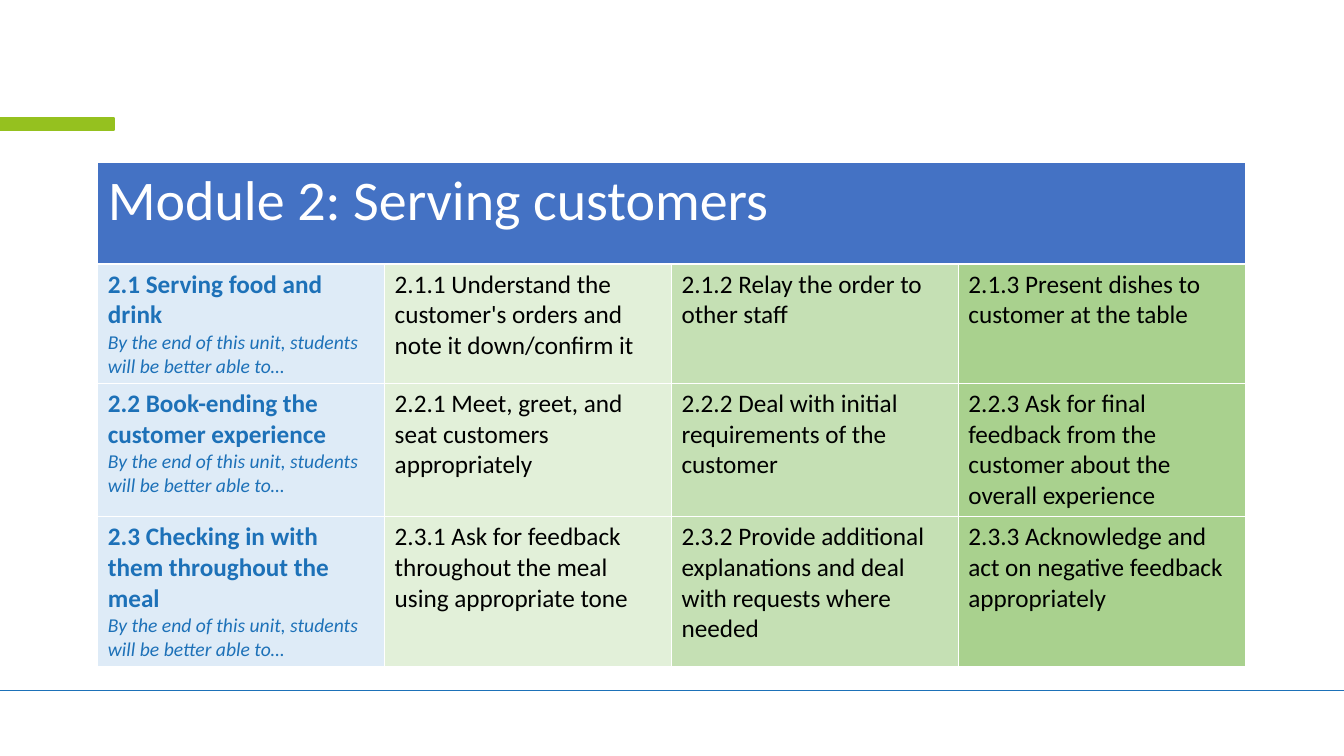
from lxml import etree
from pptx import Presentation
from pptx.dml.color import RGBColor
from pptx.enum import shapes
from pptx.oxml import ns
from pptx.util import Inches, Pt

WHITE = RGBColor(0xFF, 0xFF, 0xFF)
BLACK = RGBColor(0, 0, 0)
BLUE = RGBColor(0x1D, 0x71, 0xB8)
LIME = RGBColor(0x95, 0xC1, 0x1F)
HEADER_BLUE = RGBColor(0x44, 0x72, 0xC4)
COLUMN_FILLS = [
    RGBColor(0xDE, 0xEB, 0xF7),
    RGBColor(0xE2, 0xF0, 0xD9),
    RGBColor(0xC5, 0xE0, 0xB4),
    RGBColor(0xA9, 0xD1, 0x8E),
]

MODULE = "Module 2: Serving customers"
UNIT_LEAD = "By the end of this unit, students will be better able to…"
UNITS = [
    ("2.1 Serving food and drink",
     "2.1.1 Understand the customer's orders and note it down/confirm it",
     "2.1.2 Relay the order to other staff",
     "2.1.3 Present dishes to customer at the table"),
    ("2.2 Book-ending the customer experience",
     "2.2.1 Meet, greet, and seat customers appropriately",
     "2.2.2 Deal with initial requirements of the customer",
     "2.2.3 Ask for final feedback from the customer about the overall experience"),
    ("2.3 Checking in with them throughout the meal",
     "2.3.1 Ask for feedback throughout the meal using appropriate tone",
     "2.3.2 Provide additional explanations and deal with requests where needed",
     "2.3.3 Acknowledge and act on negative feedback appropriately"),
]


class ModuleSlide:
    """Draws the elements of a module overview in one shared style."""

    font = "Calibri"

    def __init__(self, slide):
        self.slide = slide

    def rule(self, y, width, color):
        rule = self.slide.shapes.add_connector(
            shapes.MSO_CONNECTOR.STRAIGHT, 0, Inches(y), Inches(width), Inches(y))
        rule.line.color.rgb = color
        rule.line.width = Pt(1)
        etree.SubElement(rule._element.spPr, ns.qn("a:effectLst"))

    def bar(self, left, top, width, height, color):
        bar = self.slide.shapes.add_shape(
            shapes.MSO_SHAPE.RECTANGLE,
            Inches(left), Inches(top), Inches(width), Inches(height))
        bar.shadow.inherit = False
        bar.fill.solid()
        bar.fill.fore_color.rgb = color
        bar.line.color.rgb = color
        bar.line.width = Pt(1)

    def add_words(self, paragraph, words, size, color, bold=False, italic=False):
        run = paragraph.add_run()
        run.text = words
        run.font.name = self.font
        run.font.size = Pt(size)
        run.font.color.rgb = color
        run.font.bold = bold
        run.font.italic = italic

    def cell(self, cell, fill, words, size, color, bold=False):
        cell.fill.solid()
        cell.fill.fore_color.rgb = fill
        self.add_words(cell.text_frame.paragraphs[0], words, size, color, bold)

    def overview(self, left, top, width, height, header_height, unit_height):
        frame = self.slide.shapes.add_table(
            len(UNITS) + 1, len(COLUMN_FILLS),
            Inches(left), Inches(top), Inches(width), Inches(height))
        grid = frame.table
        for row in grid.rows:
            row.height = Inches(unit_height)
        grid.rows[0].height = Inches(header_height)
        frame.height = Inches(height)

        header = grid.cell(0, 0)
        header.merge(grid.cell(0, len(COLUMN_FILLS) - 1))
        self.cell(header, HEADER_BLUE, MODULE, 40, WHITE)
        for row, unit in enumerate(UNITS, 1):
            for column, (words, fill) in enumerate(zip(unit, COLUMN_FILLS)):
                is_unit = column == 0
                self.cell(grid.cell(row, column), fill, words, 18,
                          BLUE if is_unit else BLACK, bold=is_unit)
            lead = grid.cell(row, 0).text_frame.add_paragraph()
            self.add_words(lead, UNIT_LEAD, 14, BLUE, italic=True)


def main():
    deck = Presentation()
    deck.slide_width = Inches(13.33)
    deck.slide_height = Inches(7.5)
    page = ModuleSlide(deck.slides.add_slide(deck.slide_layouts[6]))
    page.rule(6.85, 13.33, BLUE)
    page.bar(0, 1.17, 1.13, 0.12, LIME)
    page.overview(0.97, 1.61, 11.38, 4.95, header_height=1.01, unit_height=1.16)
    deck.save("out.pptx")


if __name__ == "__main__":
    main()
